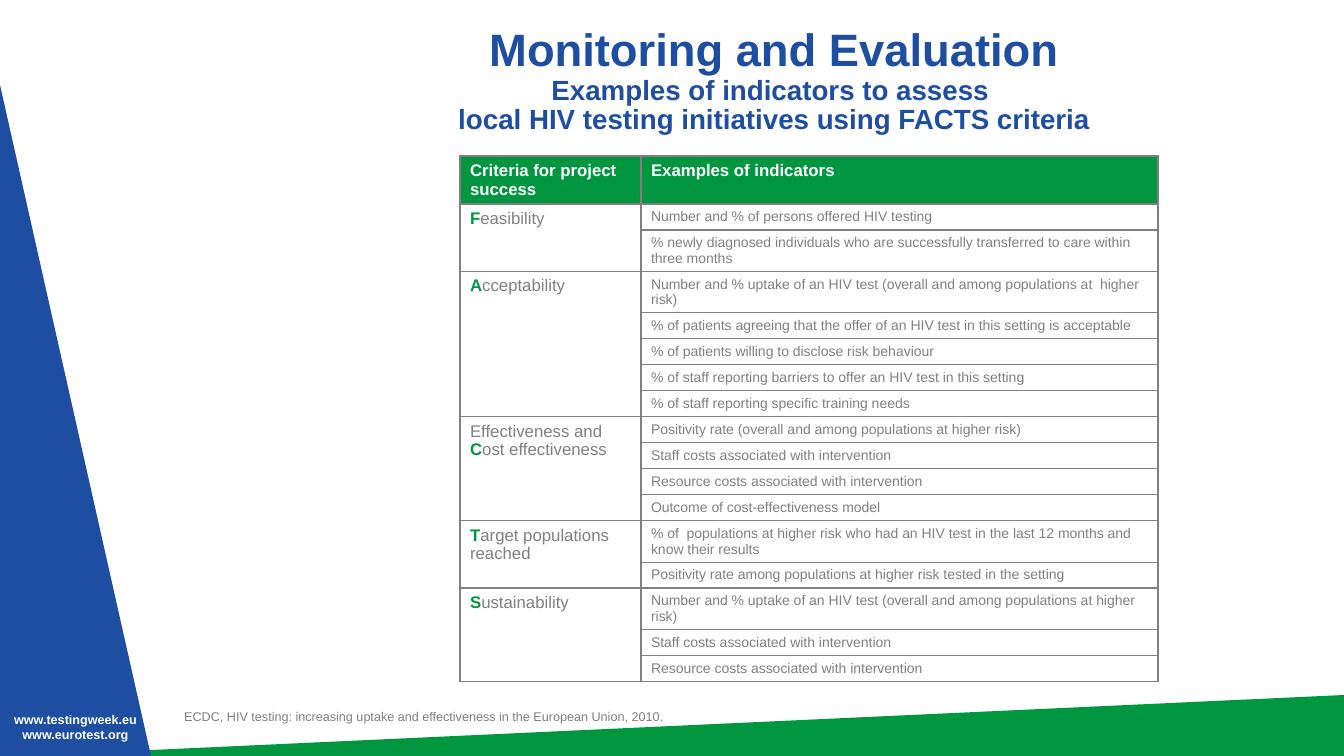
from lxml.etree import SubElement
from pptx import Presentation
from pptx.dml.color import RGBColor
from pptx.enum.shapes import MSO_SHAPE as Shape
from pptx.enum.text import MSO_ANCHOR as Anchor, MSO_AUTO_SIZE as AutoSize, PP_ALIGN as Align
from pptx.oxml import parse_xml
from pptx.oxml.ns import nsdecls, qn
from pptx.util import Pt

PX = 12192000 / 1344
BLUE, GREEN, GREY, WHITE = "1D4EA2", "009640", "808080", "FFFFFF"


def color(target, value):
    target.rgb = RGBColor.from_string(value)


def write(para, text, size=12, fill=GREY, bold=False, align=None):
    if align is not None:
        para.alignment = align
    for index, line in enumerate(text.split("\n")):
        if index:
            para.add_line_break()
            SubElement(para._p[-1], qn("a:rPr"), sz=str(round(size * 100)))
        if line:
            span = para.add_run()
            span.text = line
            span.font.name = "Arial"
            span.font.size = Pt(size)
            span.font.bold = bold
            color(span.font.color, fill)


deck = Presentation()
deck.slide_width, deck.slide_height = round(1344 * PX), round(756 * PX)
page = deck.slides.add_slide(deck.slide_layouts[5])

triangles = [
    (641, 54, 62, 1344, 270, GREEN),
    (0, 85, 151, 671, 0, BLUE),
]
for *bounds, turn, fill in triangles:
    triangle = page.shapes.add_shape(Shape.RIGHT_TRIANGLE, *[round(n * PX) for n in bounds])
    triangle.rotation = turn
    triangle.shadow.inherit = False
    triangle.fill.solid()
    color(triangle.fill.fore_color, fill)
    triangle.line.fill.background()

title = page.shapes.title
title.left, title.top, title.width, title.height = [round(n * PX) for n in (245, 22, 1058, 119)]
title.text_frame.auto_size = AutoSize.NONE
title.text_frame.word_wrap = True
title.text_frame.vertical_anchor = Anchor.MIDDLE
heading = title.text_frame.paragraphs[0]
heading.line_spacing = 0.9
write(heading, "Monitoring and Evaluation\n", size=32.4, fill=BLUE, bold=True, align=Align.CENTER)
write(heading, "Examples of indicators to assess \nlocal HIV testing initiatives using FACTS criteria",
      size=19.8, fill=BLUE, bold=True)

criteria = [
    ("", "F", "easibility", [
        "Number and % of persons offered HIV testing",
        "% newly diagnosed individuals who are successfully transferred to care within three months",
    ]),
    ("", "A", "cceptability", [
        "Number and % uptake of an HIV test (overall and among populations at  higher risk)",
        "% of patients agreeing that the offer of an HIV test in this setting is acceptable",
        "% of patients willing to disclose risk behaviour",
        "% of staff reporting barriers to offer an HIV test in this setting",
        "% of staff reporting specific training needs",
    ]),
    ("Effectiveness and ", "C", "ost effectiveness", [
        "Positivity rate (overall and among populations at higher risk)",
        "Staff costs associated with intervention",
        "Resource costs associated with intervention",
        "Outcome of cost-effectiveness model",
    ]),
    ("", "T", "arget populations reached", [
        "% of  populations at higher risk who had an HIV test in the last 12 months and know their results",
        "Positivity rate among populations at higher risk tested in the setting",
    ]),
    ("", "S", "ustainability", [
        "Number and % uptake of an HIV test (overall and among populations at higher risk)",
        "Staff costs associated with intervention",
        "Resource costs associated with intervention",
    ]),
]
two_line_rows = {2, 3, 12, 14}
row_count = 1 + sum(len(indicators) for *_, indicators in criteria)
heights = [48] + [41 if row in two_line_rows else 26 for row in range(1, row_count)]
frame = page.shapes.add_table(row_count, 2, *[round(n * PX) for n in (460, 156, 698, sum(heights))])
table = frame.table
table.first_row = table.horz_banding = False
for column, width in zip(table.columns, (181, 517)):
    column.width = round(width * PX)
for row, height in zip(table.rows, heights):
    row.height = round(height * PX)

for row in range(row_count):
    for column in range(2):
        cell = table.cell(row, column)
        cell.fill.solid()
        color(cell.fill.fore_color, WHITE if row else GREEN)
        properties = cell._tc.get_or_add_tcPr()
        for index, side in enumerate("LRTB"):
            properties.insert(index, parse_xml(
                f'<a:ln{side} {nsdecls("a")} w="12700"><a:solidFill>'
                f'<a:srgbClr val="{GREY}"/></a:solidFill></a:ln{side}>'))

for column, label in enumerate(("Criteria for project success", "Examples of indicators")):
    write(table.cell(0, column).text_frame.paragraphs[0], label, fill=WHITE, bold=True)

row = 1
for before, letter, after, indicators in criteria:
    criterion = table.cell(row, 0)
    criterion.merge(table.cell(row + len(indicators) - 1, 0))
    para = criterion.text_frame.paragraphs[0]
    write(para, before)
    write(para, letter, fill=GREEN, bold=True)
    write(para, after)
    for indicator in indicators:
        write(table.cell(row, 1).text_frame.paragraphs[0], indicator, size=10)
        row += 1

notes = [
    ((-8, 707, 167, 40), ["www.testingweek.eu", "www.eurotest.org"],
     dict(fill=WHITE, bold=True, align=Align.CENTER)),
    ((67, 704, 606, 25),
     ["ECDC, HIV testing: increasing uptake and effectiveness in the European Union, 2010."],
     dict(align=Align.RIGHT)),
]
for bounds, lines, style in notes:
    box = page.shapes.add_textbox(*[round(n * PX) for n in bounds])
    box.text_frame.word_wrap = True
    for index, line in enumerate(lines):
        para = box.text_frame.add_paragraph() if index else box.text_frame.paragraphs[0]
        write(para, line, size=9, **style)

deck.save("out.pptx")
